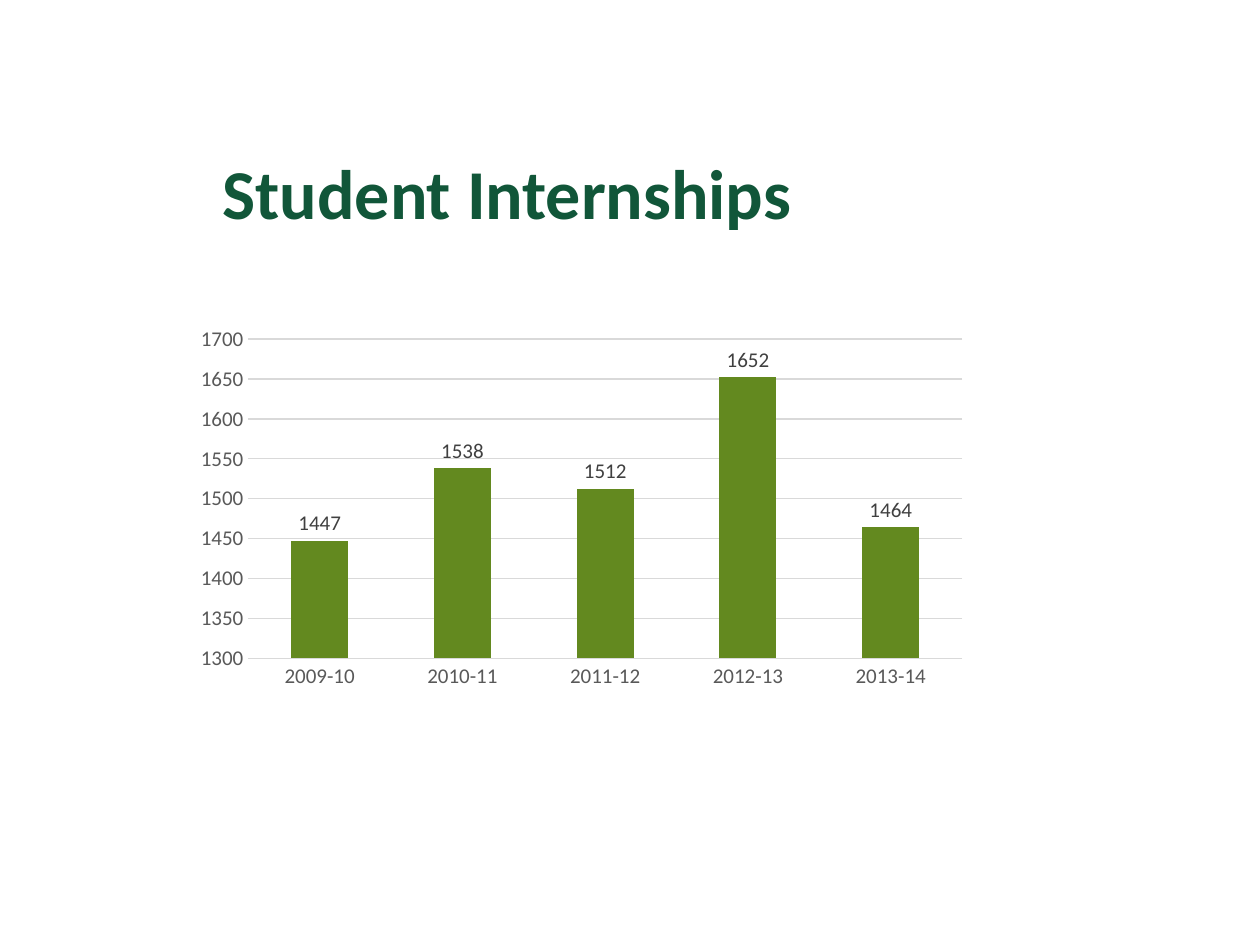
from pptx import Presentation
from pptx.chart.data import CategoryChartData
from pptx.dml.color import RGBColor
from pptx.enum.chart import XL_CHART_TYPE, XL_LABEL_POSITION, XL_TICK_MARK
from pptx.enum.text import MSO_ANCHOR, PP_ALIGN
from pptx.util import Pt

COLUMNS = XL_CHART_TYPE.COLUMN_CLUSTERED
OUTSIDE_END = XL_LABEL_POSITION.OUTSIDE_END
NO_TICK = XL_TICK_MARK.NONE
MIDDLE = MSO_ANCHOR.MIDDLE
LEFT = PP_ALIGN.LEFT

HEADING = "Student Internships"
INTERNSHIPS = {
    "2009-10": 1447,
    "2010-11": 1538,
    "2011-12": 1512,
    "2012-13": 1652,
    "2013-14": 1464,
}

FONT = "Calibri"
DARK_GREEN = RGBColor(0x11, 0x56, 0x39)
BAR_GREEN = RGBColor(0x63, 0x89, 0x1F)
AXIS_GREY = RGBColor(0x59, 0x59, 0x59)
LABEL_GREY = RGBColor(0x40, 0x40, 0x40)
GRID_GREY = RGBColor(0xD9, 0xD9, 0xD9)
BLACK = RGBColor(0, 0, 0)

PX_PER_INCH = 126
SLIDE_SIZE = (1260, 945)
TITLE_BOX = (210, 112, 1071, 159)
CHART_BOX = (185, 319, 793, 377)


def emu(px):
    return round(px * 914400 / PX_PER_INCH)


def style_font(font, size, color, bold=False):
    font.name = FONT
    font.size = Pt(size)
    font.bold = bold
    font.color.rgb = color


def add_heading(slide):
    title = slide.shapes.title
    title.left, title.top, title.width, title.height = map(emu, TITLE_BOX)
    title.text_frame.vertical_anchor = MIDDLE
    paragraph = title.text_frame.paragraphs[0]
    paragraph.alignment = LEFT
    run = paragraph.add_run()
    run.text = HEADING
    style_font(run.font, 40, DARK_GREEN, bold=True)


def add_internship_chart(slide):
    data = CategoryChartData()
    data.categories = list(INTERNSHIPS)
    data.add_series("Series 1", list(INTERNSHIPS.values()))
    chart = slide.shapes.add_chart(COLUMNS, *map(emu, CHART_BOX), data).chart
    chart.has_legend = False
    chart.has_title = False
    style_font(chart.font, 10, BLACK)

    for axis in (chart.category_axis, chart.value_axis):
        axis.major_tick_mark = axis.minor_tick_mark = NO_TICK
        axis.format.line.fill.background()
        style_font(axis.tick_labels.font, 12, AXIS_GREY)

    values = chart.value_axis
    values.minimum_scale, values.maximum_scale, values.major_unit = 1300, 1700, 50
    grid = values.major_gridlines.format.line
    grid.color.rgb = GRID_GREY
    grid.width = Pt(0.75)

    plot = chart.plots[0]
    plot.gap_width = 150
    plot.vary_by_categories = False
    bars = plot.series[0]
    bars.format.fill.solid()
    bars.format.fill.fore_color.rgb = BAR_GREEN
    labels = bars.data_labels
    labels.show_value = True
    labels.position = OUTSIDE_END
    style_font(labels.font, 12, LABEL_GREY)


def main():
    deck = Presentation()
    deck.slide_width, deck.slide_height = map(emu, SLIDE_SIZE)
    slide = deck.slides.add_slide(deck.slide_layouts[5])
    add_heading(slide)
    add_internship_chart(slide)
    deck.save("out.pptx")


if __name__ == "__main__":
    main()
